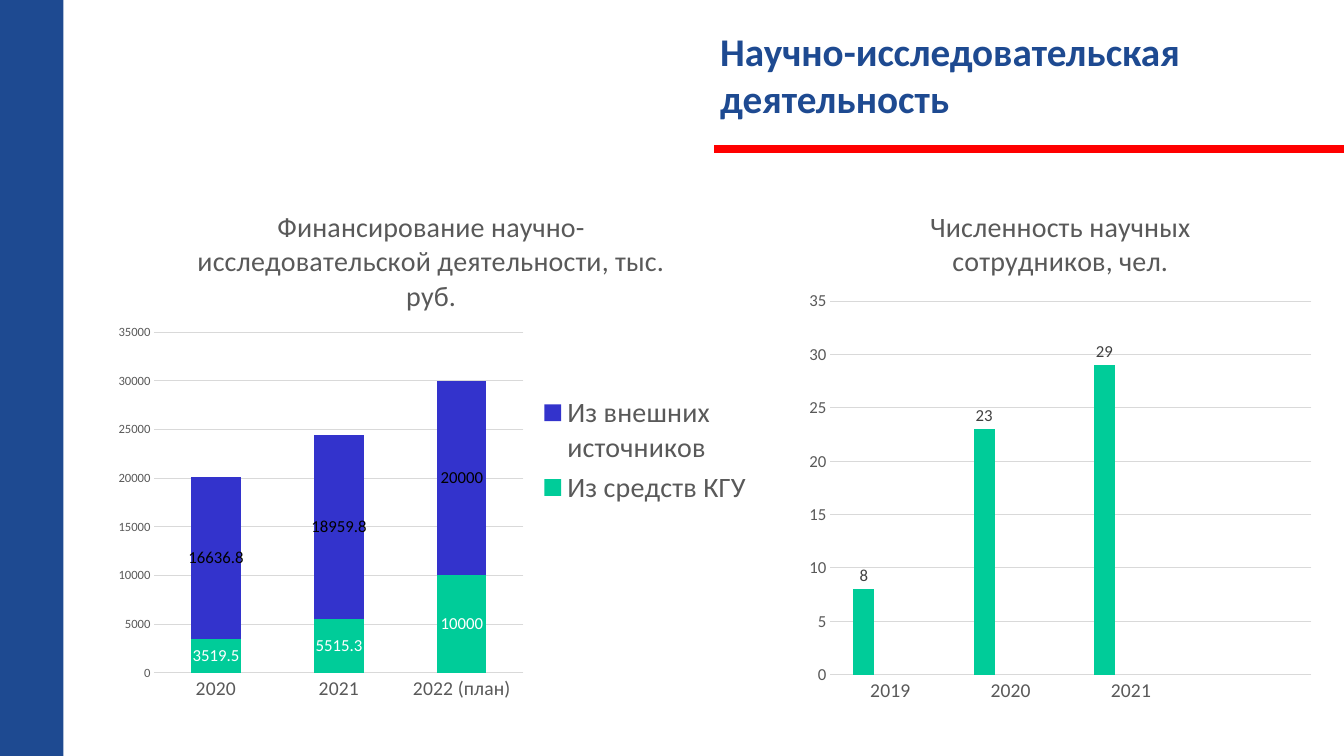
from dataclasses import dataclass

import pptx
import pptx.chart.data
import pptx.dml.color
import pptx.enum.chart
import pptx.enum.shapes
import pptx.enum.text
import pptx.oxml
import pptx.oxml.ns
import pptx.oxml.xmlchemy
import pptx.util

Pt = pptx.util.Pt
qn = pptx.oxml.ns.qn
new_element = pptx.oxml.xmlchemy.OxmlElement
XL = pptx.enum.chart


@dataclass(frozen=True)
class Theme:
    font: str = "Calibri"
    navy: str = "1E4A91"
    red: str = "FF0000"
    green: str = "00CC99"
    blue: str = "3333CC"
    white: str = "FFFFFF"
    black: str = "000000"
    label: str = "404040"
    text: str = "595959"
    grid: str = "D9D9D9"
    heading: int = 28
    chart_title: int = 20
    category: int = 14
    value_label: int = 12
    small_value: int = 9
    base: int = 10


THEME = Theme()
SLIDE_WIDTH, SLIDE_HEIGHT = 960.48, 540


def rgb(value):
    return pptx.dml.color.RGBColor.from_string(value)


def style_font(font, size, color, bold=False):
    formats = {"name": THEME.font, "size": Pt(size), "bold": bold}
    for attribute, value in formats.items():
        setattr(font, attribute, value)
    font.color.rgb = rgb(color)


def set_layout(parent, index, fractions, inner=False):
    """Place a plot area or legend by fractions (x, y, w, h) of its chart."""
    for old in parent.findall(qn("c:layout")):
        parent.remove(old)
    layout = new_element("c:layout")
    manual = new_element("c:manualLayout")
    layout.append(manual)
    settings = {"layoutTarget": "inner"} if inner else {}
    settings.update(xMode="edge", yMode="edge")
    settings.update(zip("xywh", fractions))
    for tag, value in settings.items():
        child = new_element(f"c:{tag}")
        child.set("val", str(value))
        manual.append(child)
    parent.insert(index, layout)


def add_sidebar(slide, left, top, width, height):
    sidebar = slide.shapes.add_shape(
        pptx.enum.shapes.MSO_SHAPE.RECTANGLE, Pt(left), Pt(top), Pt(width), Pt(height))
    sidebar.shadow.inherit = False
    sidebar.fill.solid()
    sidebar.fill.fore_color.rgb = rgb(THEME.navy)
    sidebar.line.fill.background()


def add_heading(slide, left, top, width, height, wording):
    """Heading with a red rule beneath it that runs to the slide edge."""
    rule_y = top + height + 15
    rule = slide.shapes.add_connector(
        pptx.enum.shapes.MSO_CONNECTOR.STRAIGHT,
        Pt(left + 3), Pt(rule_y), Pt(SLIDE_WIDTH), Pt(rule_y))
    rule.line.color.rgb = rgb(THEME.red)
    rule.line.width = Pt(6)
    rule._element.spPr.append(new_element("a:effectLst"))

    heading = slide.shapes.add_textbox(Pt(left), Pt(top), Pt(width), Pt(height))
    heading.text_frame.word_wrap = True
    heading.text_frame.auto_size = pptx.enum.text.MSO_AUTO_SIZE.SHAPE_TO_FIT_TEXT
    run = heading.text_frame.paragraphs[0].add_run()
    run.text = wording
    style_font(run.font, THEME.heading, THEME.navy, bold=True)


def style_axes(chart, value_size, maximum, step):
    categories, values = chart.category_axis, chart.value_axis
    for axis, size in ((categories, THEME.category), (values, value_size)):
        axis.major_tick_mark = axis.minor_tick_mark = XL.XL_TICK_MARK.NONE
        style_font(axis.tick_labels.font, size, THEME.text)
    scale = {"minimum_scale": 0, "maximum_scale": maximum, "major_unit": step,
             "has_major_gridlines": True}
    for attribute, value in scale.items():
        setattr(values, attribute, value)
    values.format.line.fill.background()
    for line in (categories.format.line, values.major_gridlines.format.line):
        line.color.rgb = rgb(THEME.grid)
        line.width = Pt(0.75)


def add_column_chart(slide, box, kind, title, categories, series, plot_area,
                     gap, overlap, value_size, maximum, step):
    """Series are (name, values, fill colour, label colour or None)."""
    data = pptx.chart.data.CategoryChartData()
    data.categories = categories
    for name, values, *_ in series:
        data.add_series(name, values)
    chart = slide.shapes.add_chart(kind, *map(Pt, box), data).chart
    style_font(chart.font, THEME.base, THEME.black)
    chart.has_legend = False
    chart.has_title = True
    run = chart.chart_title.text_frame.paragraphs[0].add_run()
    run.text = title
    style_font(run.font, THEME.chart_title, THEME.text)
    style_axes(chart, value_size, maximum, step)

    plot = chart.plots[0]
    formats = {"gap_width": gap, "overlap": overlap, "vary_by_categories": False}
    for attribute, value in formats.items():
        setattr(plot, attribute, value)
    for column, (_, _, fill, label) in zip(plot.series, series):
        column.format.fill.solid()
        column.format.fill.fore_color.rgb = rgb(fill)
        column.invert_if_negative = False
        if label:
            column.data_labels.show_value = True
            style_font(column.data_labels.font, THEME.value_label, label)
    set_layout(chart._chartSpace.chart.plotArea, 0, plot_area, inner=True)
    return chart


def add_funding(slide, box):
    chart = add_column_chart(
        slide, box, XL.XL_CHART_TYPE.COLUMN_STACKED,
        "Финансирование научно-исследовательской деятельности, тыс. руб.",
        ["2020", "2021", "2022 (план)"],
        [("Из средств КГУ", (3519.5, 5515.3, 10000), THEME.green, THEME.white),
         ("Из внешних источников", (16636.8, 18959.8, 20000), THEME.blue, THEME.black)],
        plot_area=(0.08, 0.28, 0.56, 0.65), gap=150, overlap=100,
        value_size=THEME.small_value, maximum=35000, step=5000)
    chart.has_legend = True
    chart.legend.position = XL.XL_LEGEND_POSITION.RIGHT
    chart.legend.include_in_layout = False
    style_font(chart.legend.font, THEME.chart_title, THEME.text)
    set_layout(chart.legend._element, 1, (0.66, 0.39, 0.33, 0.23))


def add_staff(slide, box):
    empty = (None,) * 4
    add_column_chart(
        slide, box, XL.XL_CHART_TYPE.COLUMN_CLUSTERED,
        "Численность научных сотрудников, чел.",
        ["2019", "2020", "2021", ""],
        [("Series 1", (8, 23, 29, None), THEME.green, THEME.label),
         ("Series 2", empty, THEME.blue, None),
         ("Series 3", empty, THEME.white, None)],
        plot_area=(0.06, 0.22, 0.92, 0.71), gap=219, overlap=-27,
        value_size=THEME.value_label, maximum=35, step=5)


def main():
    deck = pptx.Presentation()
    deck.slide_width, deck.slide_height = Pt(SLIDE_WIDTH), Pt(SLIDE_HEIGHT)
    slide = deck.slides.add_slide(deck.slide_layouts[6])
    add_heading(slide, 507.6, 16, 436, 75.6, "Научно-исследовательская деятельность")
    add_sidebar(slide, 0, 0, 45.4, 541.4)
    add_funding(slide, (72.7, 132.5, 470.9, 374.4))
    add_staff(slide, (571, 132.5, 373.7, 375.8))
    deck.save("out.pptx")


if __name__ == "__main__":
    main()
